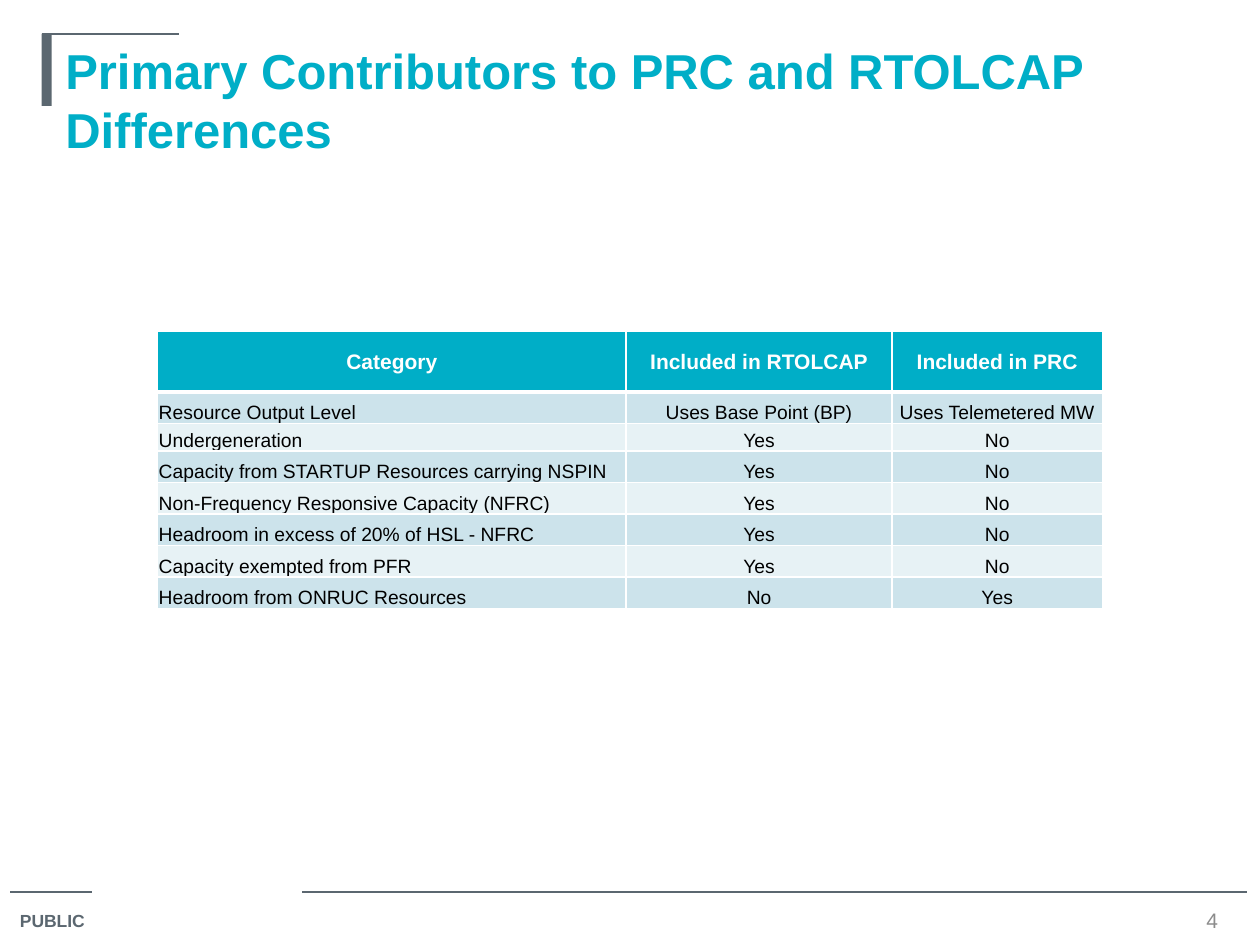
"""Build the slide comparing what RTOLCAP and PRC include."""
from typing import NamedTuple

from lxml import etree
from pptx import Presentation
from pptx.dml.color import RGBColor
from pptx.enum.shapes import MSO_CONNECTOR, MSO_SHAPE
from pptx.enum.text import MSO_ANCHOR, PP_ALIGN
from pptx.oxml.ns import qn
from pptx.util import Inches, Pt

STRAIGHT = MSO_CONNECTOR.STRAIGHT
RECTANGLE = MSO_SHAPE.RECTANGLE
TOP, MIDDLE, BOTTOM = MSO_ANCHOR.TOP, MSO_ANCHOR.MIDDLE, MSO_ANCHOR.BOTTOM
LEFT, CENTER = PP_ALIGN.LEFT, PP_ALIGN.CENTER

COLORS = {
    "slate": "5B6770",
    "teal": "00AEC7",
    "gray": "8C8C8C",
    "white": "FFFFFF",
    "black": "000000",
    "dark_band": "CCE3EB",
    "light_band": "E7F2F5",
}


class Rule(NamedTuple):
    """A horizontal line, in inches."""
    start: float
    end: float
    y: float


class Label(NamedTuple):
    """A text box with its place in inches and its format."""
    text: str
    place: tuple[float, float, float, float]
    size: int
    color: str
    bold: bool = False
    align: PP_ALIGN = LEFT
    anchor: MSO_ANCHOR = TOP


RULES = [Rule(0.08, 0.73, 7.08), Rule(2.4, 9.9, 7.08), Rule(0.33, 1.42, 0.27)]
LABELS = [
    Label("PUBLIC", (0.06, 7.17, 0.77, 0.28), 10, "slate", bold=True),
    Label("Primary Contributors to PRC and RTOLCAP Differences",
          (0.42, 0.27, 9.25, 0.57), 28, "teal", bold=True),
    Label("4", (9.33, 7.18, 0.58, 0.24), 12, "gray", align=CENTER, anchor=MIDDLE),
]
COLUMN_WIDTHS = [3.72, 2.11, 1.67]
ROW_HEIGHTS = [0.48, 0.25, 0.22] + [0.25] * 5
TABLE_ROWS = [
    ("Category", "Included in RTOLCAP", "Included in PRC"),
    ("Resource Output Level", "Uses Base Point (BP)", "Uses Telemetered MW"),
    ("Undergeneration", "Yes", "No"),
    ("Capacity from STARTUP Resources carrying NSPIN", "Yes", "No"),
    ("Non-Frequency Responsive Capacity (NFRC)", "Yes", "No"),
    ("Headroom in excess of 20% of HSL - NFRC", "Yes", "No"),
    ("Capacity exempted from PFR", "Yes", "No"),
    ("Headroom from ONRUC Resources", "No", "Yes"),
]


def rgb(name: str) -> RGBColor:
    """Look up a colour by name."""
    return RGBColor.from_string(COLORS[name])


def write(frame, text: str, *, size: int, color: str, bold: bool = False,
          align: PP_ALIGN = LEFT) -> None:
    """Write one formatted paragraph into a text frame."""
    para = frame.paragraphs[0]
    para.alignment = align
    span = para.add_run()
    span.text = text
    span.font.name = "Arial"
    span.font.size = Pt(size)
    span.font.bold = bold
    span.font.color.rgb = rgb(color)


def draw_rule(page, rule: Rule) -> None:
    """Draw a thin slate line."""
    line = page.shapes.add_connector(
        STRAIGHT, Inches(rule.start), Inches(rule.y), Inches(rule.end), Inches(rule.y))
    line.line.color.rgb = rgb("slate")
    line.line.width = Pt(0.75)
    etree.SubElement(line._element.spPr, qn("a:effectLst"))


def draw_label(page, label: Label) -> None:
    """Draw a wrapped text box."""
    box = page.shapes.add_textbox(*map(Inches, label.place))
    frame = box.text_frame
    frame.word_wrap = True
    frame.vertical_anchor = label.anchor
    write(frame, label.text, size=label.size, color=label.color,
          bold=label.bold, align=label.align)


def draw_accent(page) -> None:
    """Draw the bar beside the title."""
    bar = page.shapes.add_shape(
        RECTANGLE, Inches(0.33), Inches(0.27), Inches(0.08), Inches(0.57))
    bar.shadow.inherit = False
    bar.fill.solid()
    bar.fill.fore_color.rgb = rgb("slate")
    bar.line.fill.background()


def set_borders(cell, **widths: int) -> None:
    """Give a cell white borders, with widths in points by side."""
    properties = cell._tc.get_or_add_tcPr()
    for side, width in widths.items():
        border = etree.SubElement(properties, qn(f"a:ln{side}"), w=str(Pt(width)))
        fill = etree.SubElement(border, qn("a:solidFill"))
        etree.SubElement(fill, qn("a:srgbClr"), val=COLORS["white"])


def fill_cell(cell, text: str, row: int, column: int) -> None:
    """Format and fill one table cell."""
    header = row == 0
    band = "teal" if header else "dark_band" if row % 2 else "light_band"
    set_borders(cell, L=1, R=1, T=3 if row == 1 else 1, B=3 if header else 1)
    cell.fill.solid()
    cell.fill.fore_color.rgb = rgb(band)
    cell.margin_left = cell.margin_right = cell.margin_top = Inches(0.01)
    cell.margin_bottom = 0
    cell.vertical_anchor = MIDDLE if header else BOTTOM
    write(cell.text_frame, text, size=12 if header else 11,
          color="white" if header else "black", bold=header,
          align=CENTER if header or column else LEFT)


def draw_table(page) -> None:
    """Draw the comparison table."""
    table = page.shapes.add_table(
        len(TABLE_ROWS), len(COLUMN_WIDTHS), Inches(1.25), Inches(2.63),
        Inches(sum(COLUMN_WIDTHS)), Inches(sum(ROW_HEIGHTS))).table
    for column, width in zip(table.columns, COLUMN_WIDTHS):
        column.width = Inches(width)
    for row, height in zip(table.rows, ROW_HEIGHTS):
        row.height = Inches(height)
    for row, texts in enumerate(TABLE_ROWS):
        for column, text in enumerate(texts):
            fill_cell(table.cell(row, column), text, row, column)


def main() -> None:
    """Build and save the deck."""
    deck = Presentation()
    deck.slide_width, deck.slide_height = Inches(10), Inches(7.5)
    page = deck.slides.add_slide(deck.slide_layouts[6])
    draw_accent(page)
    for rule in RULES:
        draw_rule(page, rule)
    for label in LABELS:
        draw_label(page, label)
    draw_table(page)
    deck.save("out.pptx")


if __name__ == "__main__":
    main()
